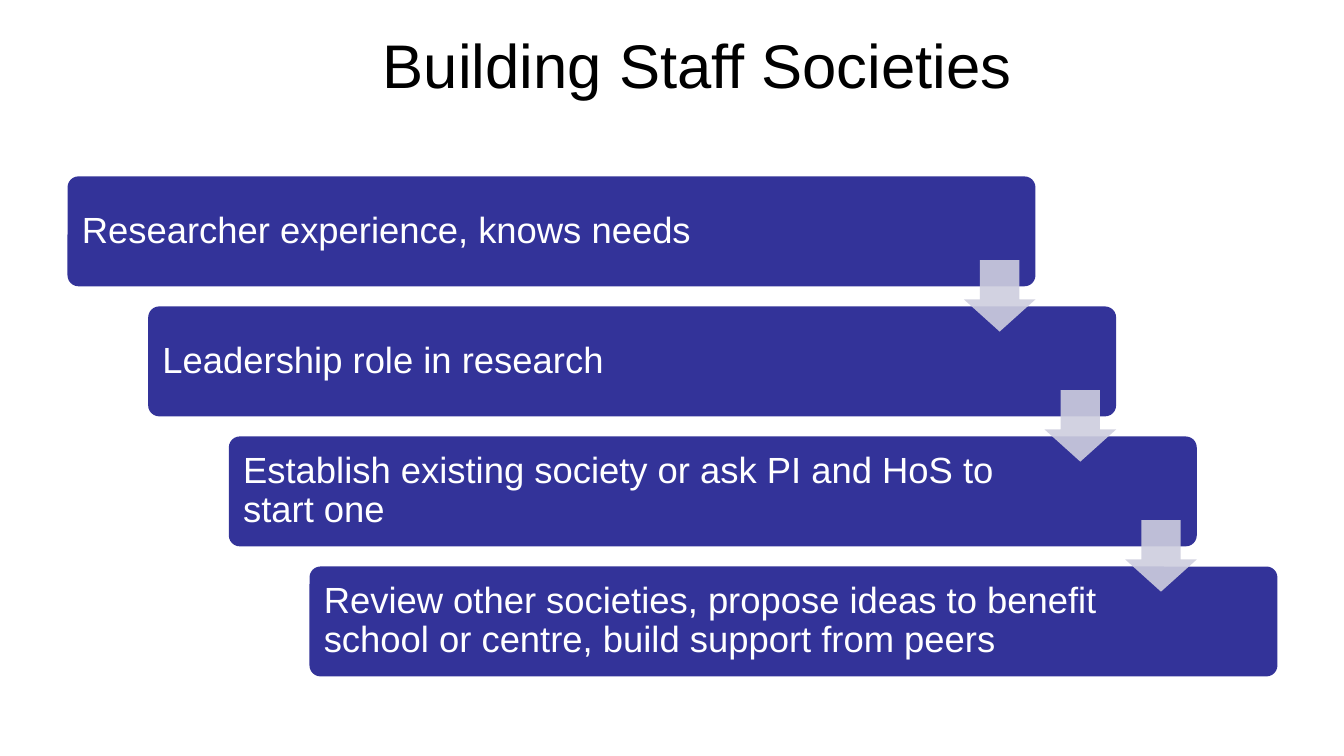
from pptx import Presentation
from pptx.dml.color import RGBColor
from pptx.enum.shapes import MSO_SHAPE
from pptx.enum.text import MSO_ANCHOR, PP_ALIGN
from pptx.oxml.ns import qn
from pptx.util import Inches, Pt
from lxml.etree import SubElement

TITLE = "Building Staff Societies"
STEPS = [
    "Researcher experience, knows needs",
    "Leadership role in research",
    "Establish existing society or ask PI and HoS to start one",
    "Review other societies, propose ideas to benefit school or centre, "
    "build support from peers",
]


class Theme:
    font = "Arial"
    title_size, step_size = Pt(44), Pt(26)
    title = RGBColor.from_string("000000")
    bar = RGBColor.from_string("333399")
    bar_text = RGBColor.from_string("FFFFFF")
    arrow = RGBColor.from_string("CECEDE")
    arrow_alpha = 90


# Staircase geometry, in inches
LEFT, TOP = 0.67, 1.75
STEP_X, STEP_Y = 0.8, 1.29
BAR_W, BAR_H = 9.6, 1.09
ARROW = 0.71
ARROW_DX, ARROW_DY = 8.89, 0.83
PAD, PAD_RIGHT = 0.11, 1.64


def write(tf, text, size, color, align):
    tf.word_wrap = True
    tf.vertical_anchor = MSO_ANCHOR.MIDDLE
    p = tf.paragraphs[0]
    p.text = text
    p.alignment = align
    p.font.name, p.font.size = Theme.font, size
    p.font.color.rgb = color
    return p


def add_filled(s, kind, x, y, w, h, color, adjustments):
    sp = s.shapes.add_shape(kind, Inches(x), Inches(y), Inches(w), Inches(h))
    for i, value in enumerate(adjustments):
        sp.adjustments[i] = value
    sp.shadow.inherit = False
    sp.fill.solid()
    sp.fill.fore_color.rgb = color
    sp.line.fill.background()
    return sp


def add_bar(s, x, y, text):
    sp = add_filled(s, MSO_SHAPE.ROUNDED_RECTANGLE, x, y, BAR_W, BAR_H,
                    Theme.bar, [0.1])
    tf = sp.text_frame
    tf.margin_left = tf.margin_top = tf.margin_bottom = Inches(PAD)
    tf.margin_right = Inches(PAD_RIGHT)
    p = write(tf, text, Theme.step_size, Theme.bar_text, PP_ALIGN.LEFT)
    p.line_spacing = 0.9


def add_arrow(s, x, y):
    sp = add_filled(s, MSO_SHAPE.DOWN_ARROW, x, y, ARROW, ARROW,
                    Theme.arrow, [0.55, 0.45])
    color = sp.fill._xPr.find(qn("a:solidFill"))[0]
    SubElement(color, qn("a:alpha")).set("val", str(Theme.arrow_alpha * 1000))


prs = Presentation()
prs.slide_width, prs.slide_height = Inches(13.33), Inches(7.5)
s = prs.slides.add_slide(prs.slide_layouts[6])

# Title
box = s.shapes.add_textbox(Inches(0.92), Inches(0.01), Inches(12), Inches(1.25))
write(box.text_frame, TITLE, Theme.title_size, Theme.title, PP_ALIGN.CENTER)

# Bars, then the arrows that overlap each pair
corners = [(LEFT + i * STEP_X, TOP + i * STEP_Y) for i in range(len(STEPS))]
for (x, y), text in zip(corners, STEPS):
    add_bar(s, x, y, text)
for x, y in corners[:-1]:
    add_arrow(s, x + ARROW_DX, y + ARROW_DY)

prs.save("out.pptx")
